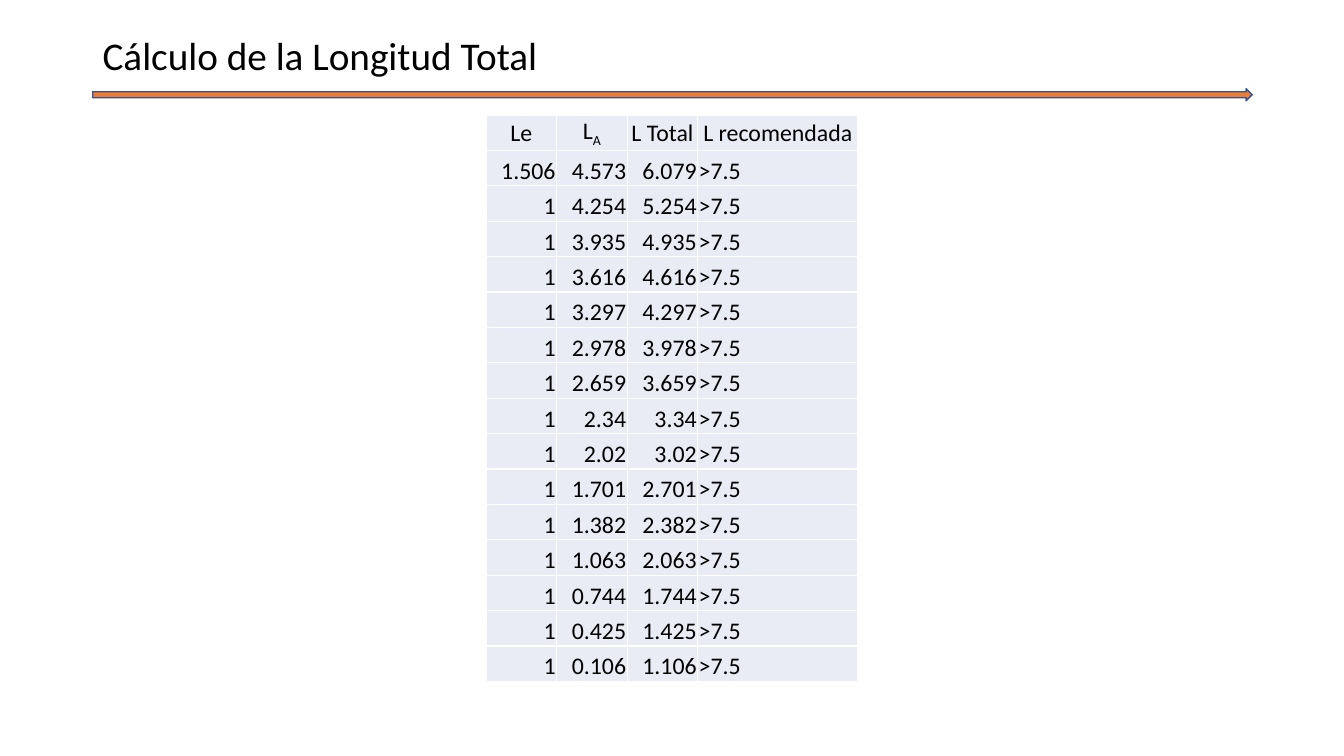
import pptx
import pptx.util
import pptx.dml.color
import pptx.enum.shapes
import pptx.enum.text
import pptx.oxml
import pptx.oxml.ns

Inches = pptx.util.Inches
Pt = pptx.util.Pt
ALIGN = pptx.enum.text.PP_ALIGN
ANCHOR = pptx.enum.text.MSO_ANCHOR
FONT = "Calibri"
COLORS = {"text": "000000", "arrow": "ED7D31", "edge": "325491",
          "cell": "E9EBF5", "rule": "FFFFFF"}
HEADS = ["Le", "LA", "L Total", "L recomendada"]
WIDTHS = [0.7, 0.7, 0.7, 1.59]
LE = [1.506] + [1] * 14
LA = [4.573, 4.254, 3.935, 3.616, 3.297, 2.978, 2.659, 2.34,
      2.02, 1.701, 1.382, 1.063, 0.744, 0.425, 0.106]
LIMIT = ">7.5"


def color(name):
    """Return the named colour."""
    return pptx.dml.color.RGBColor.from_string(COLORS[name])


def style(para, size):
    """Format every run of a paragraph."""
    for run in para.runs:
        run.font.name = FONT
        run.font.size = Pt(size)
        run.font.color.rgb = color("text")


def add_title(slide, left, top, width, height):
    """Place the heading in its box."""
    box = slide.shapes.add_textbox(*map(Inches, (left, top, width, height)))
    frame = box.text_frame
    frame.word_wrap = True
    frame.vertical_anchor = ANCHOR.MIDDLE
    frame.text = "Cálculo de la Longitud Total"
    para = frame.paragraphs[0]
    para.line_spacing = 0.9
    style(para, 28)


def add_arrow(slide, left, top, width, height):
    """Place the long arrow under the heading."""
    arrow = slide.shapes.add_shape(
        pptx.enum.shapes.MSO_SHAPE.RIGHT_ARROW,
        *map(Inches, (left, top, width, height)))
    arrow.shadow.inherit = False
    arrow.fill.solid()
    arrow.fill.fore_color.rgb = color("arrow")
    arrow.line.color.rgb = color("edge")
    arrow.line.width = Pt(1)


def add_rules(cell):
    """Draw the four borders of a cell."""
    props = cell._tc.get_or_add_tcPr()
    space = pptx.oxml.ns.nsdecls("a")
    for spot, side in enumerate(("lnL", "lnR", "lnT", "lnB")):
        props.insert(spot, pptx.oxml.parse_xml(
            f'<a:{side} {space} w="{Pt(1)}"><a:solidFill>'
            f'<a:srgbClr val="{COLORS["rule"]}"/></a:solidFill></a:{side}>'))


def fill_cell(cell, text, align, anchor):
    """Write and format one cell."""
    cell.margin_left = cell.margin_right = cell.margin_top = Inches(0.01)
    cell.margin_bottom = 0
    cell.vertical_anchor = anchor
    cell.fill.solid()
    cell.fill.fore_color.rgb = color("cell")
    add_rules(cell)
    para = cell.text_frame.paragraphs[0]
    para.alignment = align
    if text == "LA":
        para.add_run().text = "L"
        sub = para.add_run()
        sub.text = "A"
        sub.font._element.set("baseline", "-25000")
    else:
        para.text = text
    style(para, 17)


def add_lengths(slide, left, top, height):
    """Place the table of lengths, with totals worked out."""
    rows = [HEADS] + [[f"{le:g}", f"{la:g}", f"{le + la:g}", LIMIT]
                      for le, la in zip(LE, LA)]
    table = slide.shapes.add_table(
        len(rows), len(HEADS), Inches(left), Inches(top),
        Inches(sum(WIDTHS)), Inches(height)).table
    table.first_row = table.horz_banding = False
    for col, width in zip(table.columns, WIDTHS):
        col.width = Inches(width)
    for r, row in enumerate(rows):
        for c, text in enumerate(row):
            if r == 0:
                align, anchor = ALIGN.CENTER, ANCHOR.MIDDLE
            else:
                align = ALIGN.LEFT if text == LIMIT else ALIGN.RIGHT
                anchor = ANCHOR.BOTTOM
            fill_cell(table.cell(r, c), text, align, anchor)


def main():
    """Build and save the slide."""
    deck = pptx.Presentation()
    deck.slide_width = Inches(13.33)
    deck.slide_height = Inches(7.5)
    slide = deck.slides.add_slide(deck.slide_layouts[6])
    add_arrow(slide, 0.92, 0.88, 11.5, 0.12)
    add_title(slide, 0.92, 0.4, 11.5, 0.35)
    add_lengths(slide, 4.82, 1.14, 5.62)
    deck.save("out.pptx")


if __name__ == "__main__":
    main()
